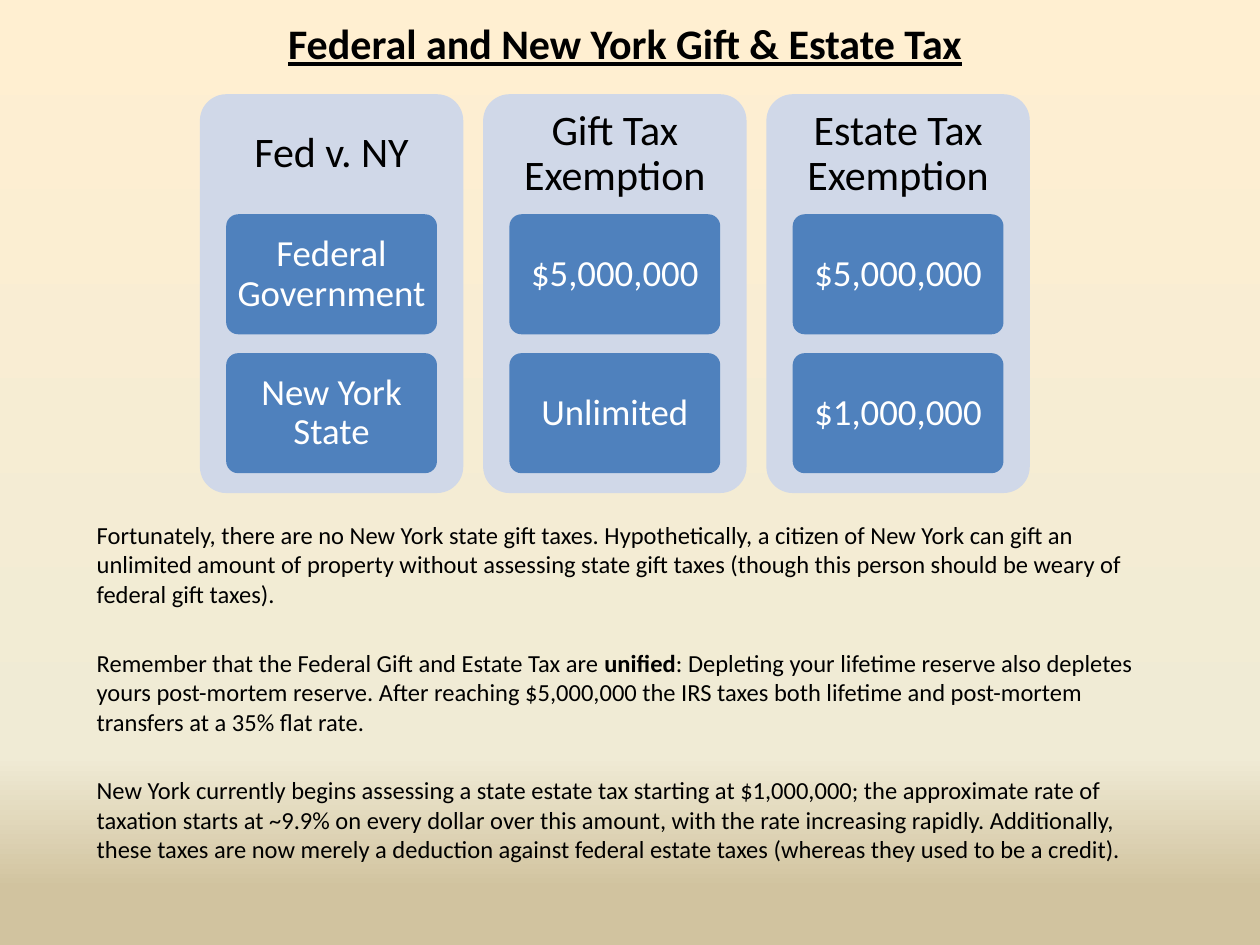
from lxml.etree import SubElement
from pptx import Presentation
from pptx.dml.color import RGBColor
from pptx.enum.shapes import MSO_SHAPE
from pptx.enum.text import MSO_ANCHOR, MSO_AUTO_SIZE, PP_ALIGN
from pptx.oxml.ns import qn
from pptx.util import Cm, Pt

FONT = "Calibri"
COLORS = {
    "text": "000000",
    "card_text": "FFFFFF",
    "panel": "D0D8E8",
    "card": "4F81BD",
}
BACKGROUND_STOPS = [(0, "FFEFD1"), (80, "F0EBD5"), (94, "D1C39F")]

# Each column: heading, federal card, New York card
COLUMNS = [
    ("Fed v. NY", "Federal Government", "New York State"),
    ("Gift Tax Exemption", "$5,000,000", "Unlimited"),
    ("Estate Tax Exemption", "$5,000,000", "$1,000,000"),
]

# Each paragraph: list of (text, bold)
NOTES = [
    [("Fortunately, there are no New York state gift taxes. Hypothetically, a "
      "citizen of New York can gift an unlimited amount of property without "
      "assessing state gift taxes (though this person should be weary of "
      "federal gift taxes).", False)],
    [("Remember that the Federal Gift and Estate Tax are ", False),
     ("unified", True),
     (": Depleting your lifetime reserve also depletes yours post-mortem "
      "reserve. After reaching $5,000,000 the IRS taxes both lifetime and "
      "post-mortem transfers at a 35% flat rate.", False)],
    [("New York currently begins assessing a state estate tax starting at "
      "$1,000,000; the approximate rate of taxation starts at ~9.9% on every "
      "dollar over this amount, with the rate increasing rapidly. "
      "Additionally, these taxes are now merely a deduction against federal "
      "estate taxes (whereas they used to be a credit).", False)],
]

# Column grid, in centimetres
PANEL_LEFT, PANEL_TOP = 4.03, 1.9
PANEL_WIDTH, PANEL_HEIGHT = 5.31, 8.04
COLUMN_PITCH = 5.71
HEADING_HEIGHT = 2.42
CARD_INDENT = 0.53
CARD_WIDTH, CARD_HEIGHT = 4.25, 2.42
CARD_PITCH = 2.8


def format_run(run, size, color, bold=False):
    run.font.name = FONT
    run.font.size = Pt(size)
    run.font.bold = bold
    run.font.color.rgb = RGBColor.from_string(COLORS[color])


def set_background(slide):
    fill = slide.background.fill
    fill.gradient()
    fill.gradient_angle = 270
    stop_list = slide.element.xpath(".//p:bg//a:gsLst")[0]
    stop_list.clear()
    for position, color in BACKGROUND_STOPS:
        stop = SubElement(stop_list, qn("a:gs"), pos=str(position * 1000))
        SubElement(stop, qn("a:srgbClr"), val=color)


def set_title(slide, text):
    title = slide.shapes.title
    title.left, title.top = Cm(4.98), Cm(0.43)
    title.width, title.height = Cm(15.24), Cm(1.07)
    text_frame = title.text_frame
    text_frame.text = text
    text_frame.auto_size = MSO_AUTO_SIZE.NONE
    text_frame.vertical_anchor = MSO_ANCHOR.BOTTOM
    paragraph = text_frame.paragraphs[0]
    paragraph.alignment = PP_ALIGN.CENTER
    format_run(paragraph.runs[0], 24, "text", bold=True)
    paragraph.runs[0].font.underline = True


def add_box(slide, left, top, width, height, fill, text, size, color,
            margins=(0.15, 0.1), space_below=0):
    """Add a rounded box whose text is centred above space_below."""
    shape = slide.shapes.add_shape(
        MSO_SHAPE.ROUNDED_RECTANGLE, Cm(left), Cm(top), Cm(width), Cm(height))
    shape.adjustments[0] = 0.1
    shape.shadow.inherit = False
    shape.fill.solid()
    shape.fill.fore_color.rgb = RGBColor.from_string(COLORS[fill])
    shape.line.fill.background()

    text_frame = shape.text_frame
    text_frame.text = text
    text_frame.word_wrap = True
    text_frame.vertical_anchor = MSO_ANCHOR.MIDDLE
    side, end = margins
    text_frame.margin_left = text_frame.margin_right = Cm(side)
    text_frame.margin_top = Cm(end)
    text_frame.margin_bottom = Cm(end + space_below)
    paragraph = text_frame.paragraphs[0]
    paragraph.alignment = PP_ALIGN.CENTER
    paragraph.line_spacing = 0.9
    format_run(paragraph.runs[0], size, color)


def add_column(slide, index, heading, cards):
    left = PANEL_LEFT + index * COLUMN_PITCH
    add_box(slide, left, PANEL_TOP, PANEL_WIDTH, PANEL_HEIGHT, "panel",
            heading, 24, "text", margins=(0.1, 0.1),
            space_below=PANEL_HEIGHT - HEADING_HEIGHT)
    for row, text in enumerate(cards):
        top = PANEL_TOP + HEADING_HEIGHT + row * CARD_PITCH
        add_box(slide, left + CARD_INDENT, top, CARD_WIDTH, CARD_HEIGHT,
                "card", text, 21, "card_text")


def add_notes_text(slide):
    text_box = slide.shapes.add_textbox(Cm(1.7), Cm(10.36), Cm(21.59), Cm(6.78))
    text_frame = text_box.text_frame
    text_frame.word_wrap = True
    for index, parts in enumerate(NOTES):
        paragraph = (text_frame.add_paragraph() if index
                     else text_frame.paragraphs[0])
        paragraph.space_before = Pt(3)
        paragraph.space_after = Pt(19.5)
        for text, bold in parts:
            run = paragraph.add_run()
            run.text = text
            format_run(run, 14, "text", bold)


def main():
    presentation = Presentation()
    presentation.slide_width, presentation.slide_height = Cm(25.4), Cm(19.05)
    slide = presentation.slides.add_slide(presentation.slide_layouts[5])

    set_background(slide)
    set_title(slide, "Federal and New York Gift & Estate Tax")
    # Comparison columns
    for index, (heading, *cards) in enumerate(COLUMNS):
        add_column(slide, index, heading, cards)
    # Explanation below the columns
    add_notes_text(slide)

    presentation.save("out.pptx")


if __name__ == "__main__":
    main()
